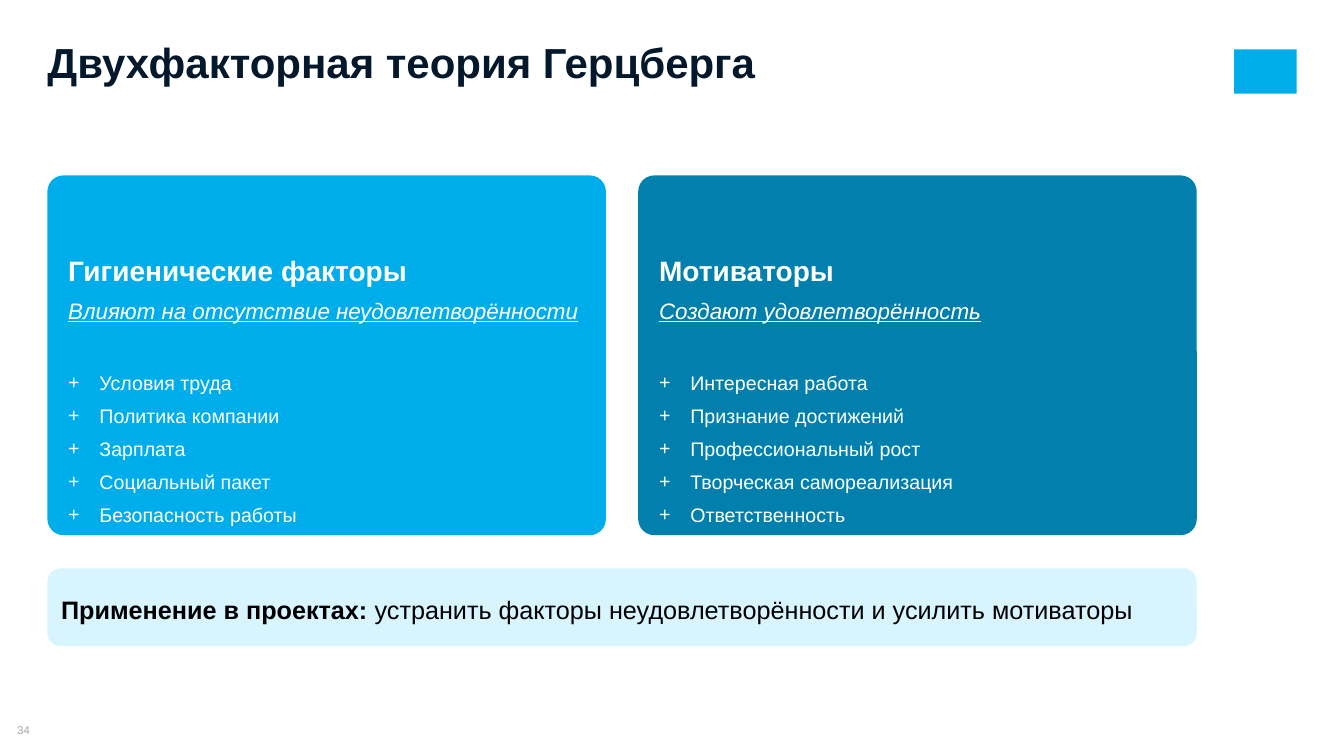
from pptx import Presentation
from pptx.dml.color import RGBColor
from pptx.enum.shapes import MSO_SHAPE as Kind
from pptx.enum.text import MSO_ANCHOR as Anchor, PP_ALIGN as Align
from pptx.oxml.ns import qn
from pptx.util import Inches, Pt
from lxml.etree import SubElement as Sub

COLORS = {
    "sky": "00ADEB",
    "sea": "017FAD",
    "pale": "C8F0FF",
    "navy": "03182B",
    "white": "FFFFFF",
    "black": "000000",
    "gray": "A6A6A6",
}
LEFT = 0.47
CARD = (5.54, 3.57)
STEP = 5.86
CARDS = [
    ("sky", "Гигиенические факторы", "Влияют на отсутствие неудовлетворённости",
     ["Условия труда", "Политика компании", "Зарплата",
      "Социальный пакет", "Безопасность работы"]),
    ("sea", "Мотиваторы", "Создают удовлетворённость",
     ["Интересная работа", "Признание достижений", "Профессиональный рост",
      "Творческая самореализация", "Ответственность"]),
]


def add_run(para, text, size, color, bold=False, slant=False):
    run = para.add_run()
    run.text = text
    font = run.font
    font.name, font.size = "Arial", Pt(size)
    font.bold, font.italic, font.underline = bold, slant, slant
    font.color.rgb = RGBColor.from_string(COLORS[color])


def add_para(frame, first=False, after=0, lead=1.0, align=Align.LEFT):
    para = frame.paragraphs[0] if first else frame.add_paragraph()
    para.alignment = align
    para.space_after, para.line_spacing = Pt(after), lead
    return para


def set_frame(frame, pads, anchor):
    frame.word_wrap = True
    frame.vertical_anchor = anchor
    (frame.margin_left, frame.margin_top,
     frame.margin_right, frame.margin_bottom) = map(Inches, pads)
    return frame


def add_block(slide, kind, box, color):
    block = slide.shapes.add_shape(kind, *map(Inches, box))
    block.shadow.inherit = False
    block.fill.solid()
    block.fill.fore_color.rgb = RGBColor.from_string(COLORS[color])
    block.line.fill.background()
    return block


def add_label(slide, box, text, size, color, bold=False, lead=1.0,
              align=Align.LEFT, anchor=Anchor.TOP):
    label = slide.shapes.add_textbox(*map(Inches, box))
    frame = set_frame(label.text_frame, (0, 0, 0, 0), anchor)
    add_run(add_para(frame, True, 0, lead, align), text, size, color, bold)


def set_bullet(para):
    props = para._p.get_or_add_pPr()
    props.set("marL", str(Inches(0.31)))
    props.set("indent", str(Inches(-0.31)))
    tint = Sub(props, qn("a:buClr"))
    Sub(tint, qn("a:srgbClr"), val=COLORS["white"])
    Sub(props, qn("a:buFont"), typeface="Arial")
    Sub(props, qn("a:buChar"), char="+")


def add_card(slide, box, color, head, note, items):
    card = add_block(slide, Kind.ROUNDED_RECTANGLE, box, color)
    card.adjustments[0] = 0.045
    frame = set_frame(card.text_frame, (0.16, 0.71, 0.16, 0.16), Anchor.TOP)
    add_run(add_para(frame, True, 6, 1.05), head, 20, "white", bold=True)
    add_run(add_para(frame, False, 33, 1.05), note, 16, "white", slant=True)
    for item in items:
        para = add_para(frame, False, 6, 1.05)
        set_bullet(para)
        add_run(para, item, 14, "white")


def add_banner(slide, box):
    banner = add_block(slide, Kind.ROUNDED_RECTANGLE, box, "pale")
    tint = banner.fill._xPr.find(".//" + qn("a:srgbClr"))
    Sub(tint, qn("a:alpha"), val="70000")
    frame = set_frame(banner.text_frame, (0.1, 0.05, 0.1, 0.05), Anchor.MIDDLE)
    para = add_para(frame, True, 0, 1.15)
    add_run(para, "Применение в проектах: ", 18, "black", bold=True)
    add_run(para, "устранить факторы неудовлетворённости и усилить мотиваторы",
            18, "black")


def main():
    deck = Presentation()
    deck.slide_width, deck.slide_height = Inches(13.33), Inches(7.5)
    slide = deck.slides.add_slide(deck.slide_layouts[6])
    add_block(slide, Kind.RECTANGLE, (12.24, 0.49, 0.62, 0.44), "sky")
    add_label(slide, (0, 7.18, LEFT, 0.13), "34", 8, "gray",
              align=Align.CENTER, anchor=Anchor.MIDDLE)
    add_label(slide, (LEFT, 0.46, 10.51, 0.41),
              "Двухфакторная теория Герцберга", 30, "navy", bold=True, lead=0.8)
    for i, card in enumerate(CARDS):
        add_card(slide, (LEFT + i * STEP, 1.74, *CARD), *card)
    add_banner(slide, (LEFT, 5.64, STEP + CARD[0], 0.77))
    deck.save("out.pptx")


if __name__ == "__main__":
    main()
